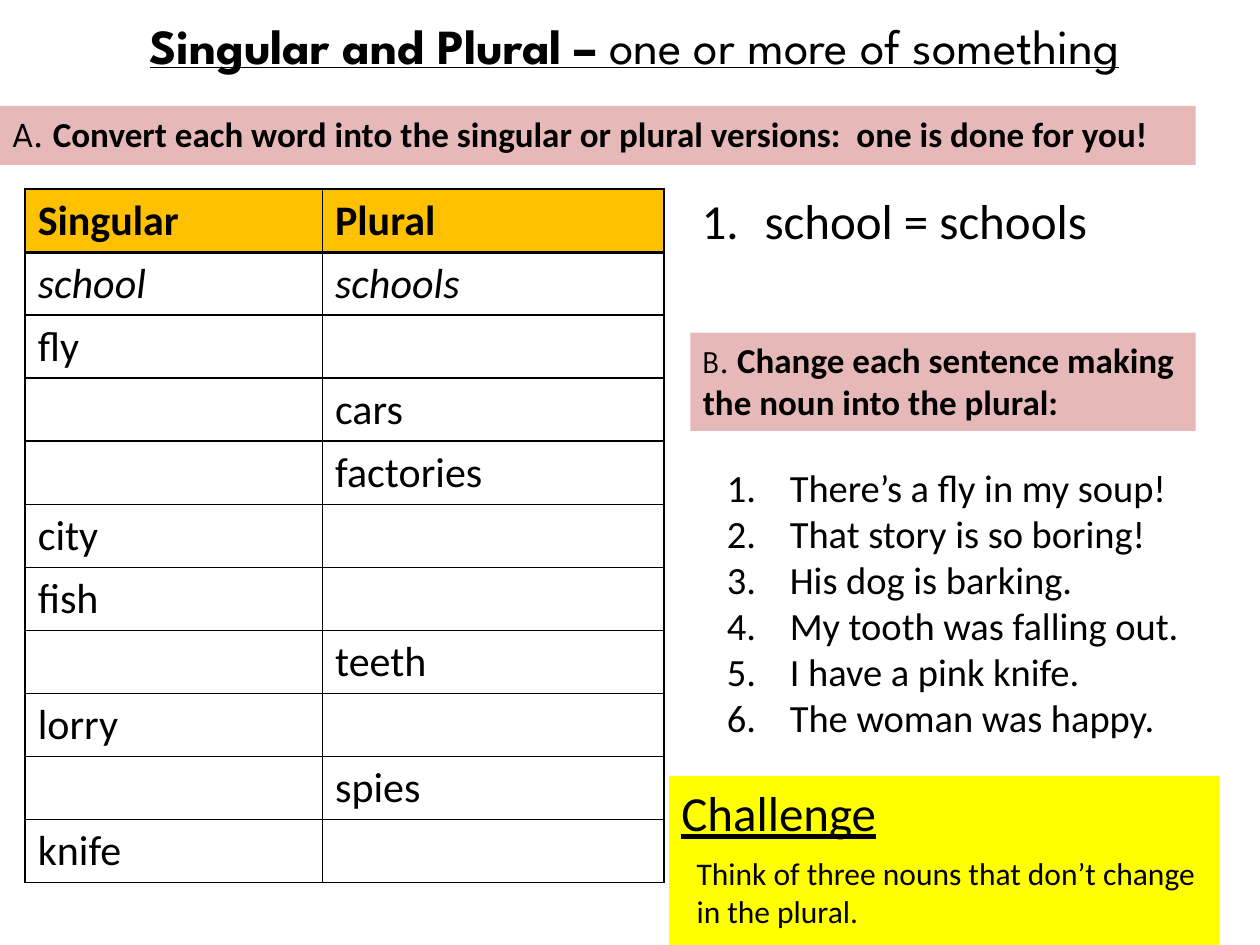
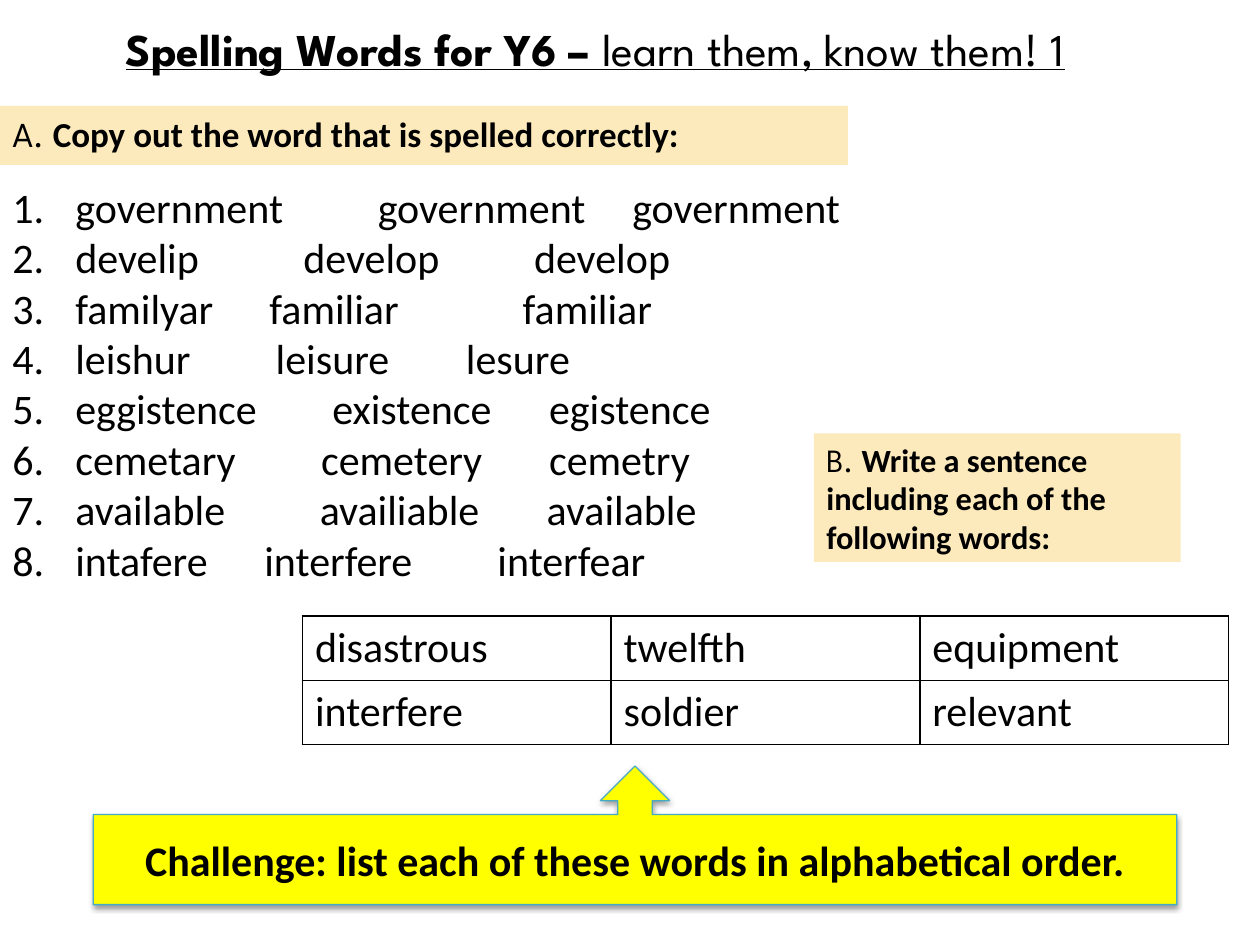
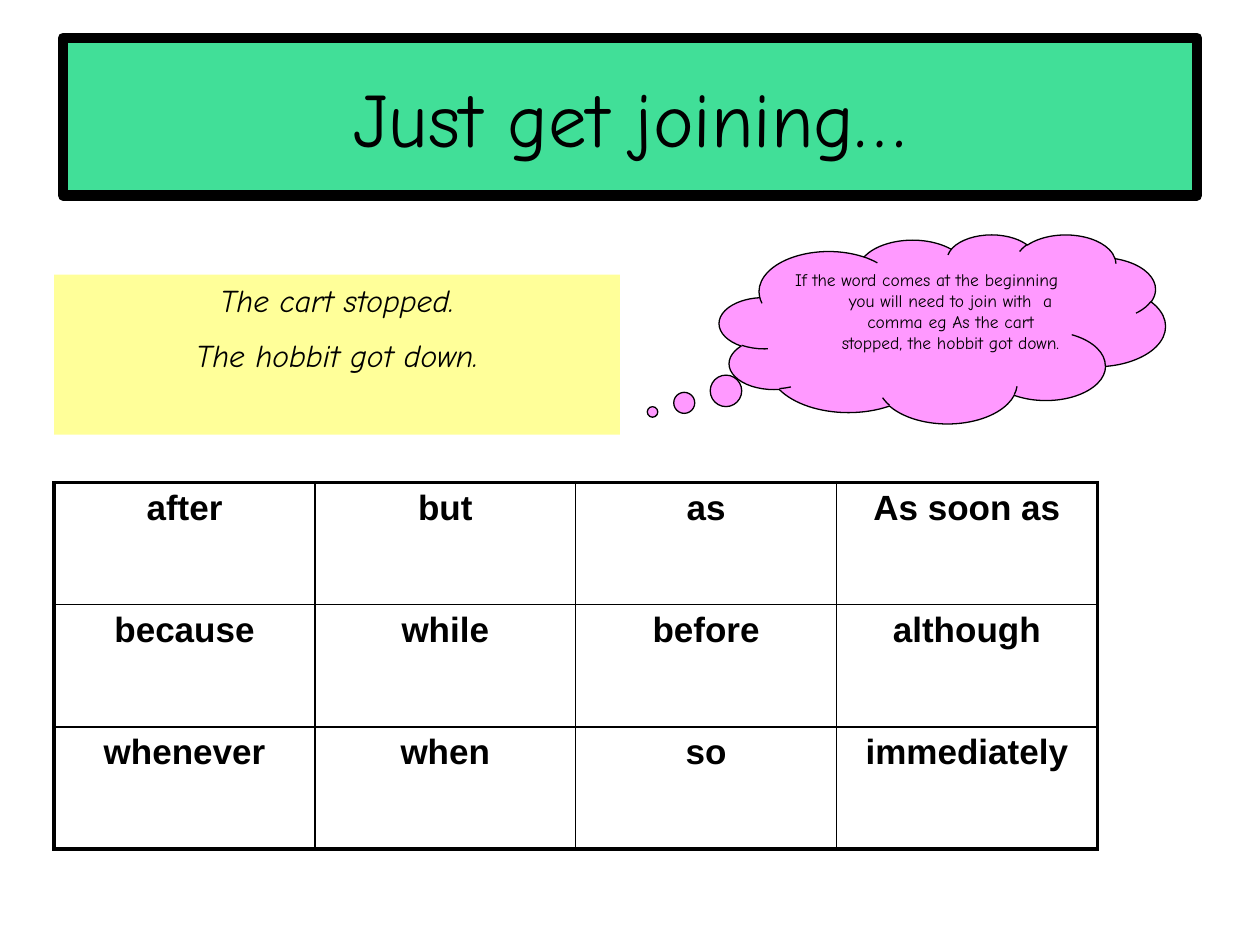
"""Build three literacy worksheets: plurals, spellings and conjunctions."""
from dataclasses import dataclass, replace

from lxml import etree
from pptx import Presentation
from pptx import util as u
from pptx.dml.color import RGBColor
from pptx.enum import shapes, text
from pptx.oxml import ns


@dataclass(frozen=True)
class Style:
    """Describe the look of a piece of text."""
    size: float
    font: str = "Calibri"
    bold: bool = False
    italic: bool = False
    underline: bool = False


@dataclass(frozen=True)
class Box:
    """Hold a region in inches."""
    left: float
    top: float
    width: float
    height: float

    def lengths(self):
        """Return the region as lengths."""
        return [u.Inches(v) for v in (self.left, self.top, self.width, self.height)]

    def inner(self, dx, dy, width, height):
        """Return a region offset from this one's corner."""
        return Box(self.left + dx, self.top + dy, width, height)


@dataclass(frozen=True)
class Theme:
    """Keep the colours and type styles of the worksheets."""
    ink: str = "000000"
    paper: str = "FFFFFF"
    pink: str = "E6B9B8"
    cream: str = "FCEABC"
    amber: str = "FFC000"
    yellow: str = "FFFF00"
    pale_yellow: str = "FFFF99"
    green: str = "41DF98"
    cloud: str = "FF99FF"
    callout_edge: str = "46AAC5"
    heading: Style = Style(28, "League Spartan", underline=True)
    letter: Style = Style(20, "League Spartan")
    task: Style = Style(20, bold=True)
    body: Style = Style(24)
    sentence: Style = Style(22)
    large: Style = Style(28)
    hint: Style = Style(18)
    joining: Style = Style(44, "Comic Neue")
    example: Style = Style(18, "Comic Neue", italic=True)
    thought: Style = Style(10, "Comic Neue")
    conjunction: Style = Style(20, "Arial", bold=True)


THEME = Theme()
CENTER = text.PP_ALIGN.CENTER
LEFT = text.PP_ALIGN.LEFT


def add_xml(parent, tag, **attributes):
    """Append a drawing element with its attributes."""
    values = {key: str(value) for key, value in attributes.items()}
    return etree.SubElement(parent, ns.qn(tag), values)


def set_font(font, style):
    """Apply a style to a font."""
    font.name, font.size = style.font, u.Pt(style.size)
    font.bold, font.italic, font.underline = style.bold, style.italic, style.underline
    font.color.rgb = RGBColor.from_string(THEME.ink)


def write(paragraph, runs, align=LEFT):
    """Write styled runs into a paragraph."""
    paragraph.alignment = align
    for words, style in runs:
        run = paragraph.add_run()
        run.text = words
        if len(runs) > 1:
            set_font(run.font, style)
    if len(runs) == 1:
        set_font(paragraph.font, runs[0][1])


def indent(paragraph, hang):
    """Give a paragraph a hanging indent and return its properties."""
    properties = paragraph._p.get_or_add_pPr()
    properties.set("marL", str(u.Inches(hang)))
    properties.set("indent", str(-u.Inches(hang)))
    return properties


def paragraphs(frame, count):
    """Return the wanted number of paragraphs of a frame."""
    return [frame.paragraphs[0]] + [frame.add_paragraph() for _ in range(count - 1)]


def text_frame(shape, anchor=text.MSO_ANCHOR.TOP):
    """Return a wrapping text frame with an anchor."""
    frame = shape.text_frame
    frame.word_wrap, frame.vertical_anchor = True, anchor
    return frame


def paint(shape, fill, edge=None, edge_width=0.75):
    """Fill and outline a shape."""
    shape.fill.solid()
    shape.fill.fore_color.rgb = RGBColor.from_string(fill)
    if edge:
        shape.line.color.rgb = RGBColor.from_string(edge)
        shape.line.width = u.Pt(edge_width)
    else:
        shape.line.fill.background()


def panel(slide, box, fill, kind=shapes.MSO_SHAPE.RECTANGLE, edge=None):
    """Add a flat filled shape."""
    shape = slide.shapes.add_shape(kind, *box.lengths())
    shape.shadow.inherit = False
    paint(shape, fill, edge)
    return shape


def title(slide, box, runs):
    """Place and write the title placeholder."""
    heading = slide.shapes.title
    heading.left, heading.top, heading.width, heading.height = box.lengths()
    frame = text_frame(heading, text.MSO_ANCHOR.MIDDLE)
    frame.auto_size = text.MSO_AUTO_SIZE.NONE
    write(frame.paragraphs[0], runs, CENTER)
    return heading


def worksheet_title(slide, box, topic, remark, size):
    """Write an underlined title with a bold topic and a plain remark."""
    style = replace(THEME.heading, size=size)
    title(slide, box, [(topic, replace(style, bold=True)), (remark, style)])


def task_banner(slide, box, fill, letter, task, letter_size=20, task_size=20):
    """Add a coloured band with a task letter and its instruction."""
    frame = text_frame(panel(slide, box, fill))
    write(frame.paragraphs[0], [(letter, replace(THEME.letter, size=letter_size)),
                                (task, replace(THEME.task, size=task_size))])


def note(slide, box, words, style):
    """Add a plain text box."""
    frame = text_frame(slide.shapes.add_textbox(*box.lengths()))
    write(frame.paragraphs[0], [(words, style)])


def numbered_list(slide, box, items, style):
    """Add a numbered list of (words, tab stops) items."""
    frame = text_frame(slide.shapes.add_textbox(*box.lengths()))
    for paragraph, (words, stops) in zip(paragraphs(frame, len(items)), items):
        properties = indent(paragraph, 0.5)
        add_xml(properties, "a:buFont", typeface="+mj-lt")
        add_xml(properties, "a:buAutoNum", type="arabicPeriod")
        if stops:
            tabs = add_xml(properties, "a:tabLst")
            for stop in stops:
                add_xml(tabs, "a:tab", pos=u.Inches(stop), algn="l")
        write(paragraph, [(words, style)])


def border(cell, widths):
    """Draw a cell's left, right, top and bottom borders."""
    properties = cell._tc.get_or_add_tcPr()
    for side, width in zip("LRTB", widths):
        line = add_xml(properties, f"a:ln{side}", w=u.Pt(width))
        add_xml(add_xml(line, "a:solidFill"), "a:srgbClr", val=THEME.ink)


def word_table(slide, box, columns, rows, row_styles, align=LEFT, outer=1, header=None):
    """Add a ruled table of words, with an optional header fill."""
    table = slide.shapes.add_table(len(rows), len(columns), *box.lengths()).table
    table.first_row = table.horz_banding = False
    for column, width in zip(table.columns, columns):
        column.width = u.Inches(width)
    last_row, last_column = len(rows) - 1, len(columns) - 1
    rule_below_header = 2 if header else 1
    for r, (words, style) in enumerate(zip(rows, row_styles)):
        table.rows[r].height = u.Inches(box.height / len(rows))
        for c, word in enumerate(words):
            cell = table.cell(r, c)
            top = outer if r == 0 else rule_below_header if r == 1 else 1
            bottom = outer if r == last_row else rule_below_header if r == 0 else 1
            border(cell, (outer if c == 0 else 1, outer if c == last_column else 1, top, bottom))
            cell.fill.solid()
            fill = header if header and r == 0 else THEME.paper
            cell.fill.fore_color.rgb = RGBColor.from_string(fill)
            paragraph = cell.text_frame.paragraphs[0]
            if word:
                write(paragraph, [(word, style)], align)
            else:
                set_font(paragraph.font, style)


def challenge_panel(slide, box, heading, hint):
    """Add a yellow panel with an underlined heading and a hint below."""
    frame = text_frame(panel(slide, box, THEME.yellow))
    write(frame.paragraphs[0], [(heading, replace(THEME.large, underline=True))])
    note(slide, box.inner(0.12, 0.57, box.width - 0.12, 0.71), hint, THEME.hint)


def challenge_callout(slide, box, words):
    """Add a shadowed callout that points up at the words above."""
    callout = panel(slide, box, THEME.yellow, shapes.MSO_SHAPE.UP_ARROW_CALLOUT,
                    THEME.callout_edge)
    effects = callout.element.spPr.find(ns.qn("a:effectLst"))
    shadow = add_xml(effects, "a:outerShdw", blurRad=u.Pt(3.1), dist=u.Pt(1.6),
                     dir=5400000, rotWithShape=0)
    add_xml(add_xml(shadow, "a:srgbClr", val=THEME.ink), "a:alpha", val=38000)
    frame = text_frame(callout, text.MSO_ANCHOR.MIDDLE)
    write(frame.paragraphs[0], [(words, replace(THEME.body, bold=True))], CENTER)


def example_panel(slide, box, sentences):
    """Add a pale panel of centred example sentences."""
    frame = text_frame(panel(slide, box, THEME.pale_yellow))
    for paragraph, sentence in zip(paragraphs(frame, len(sentences)), sentences):
        indent(paragraph, 0.38)
        paragraph.space_before = u.Pt(10)
        write(paragraph, [(sentence, THEME.example)], CENTER)


def thought_cloud(slide, box, words):
    """Add a thought cloud with a tip."""
    cloud = panel(slide, box, THEME.cloud, shapes.MSO_SHAPE.CLOUD_CALLOUT, THEME.ink)
    cloud.adjustments[0], cloud.adjustments[1] = -0.65, 0.44
    paragraph = text_frame(cloud).paragraphs[0]
    indent(paragraph, 0.38)
    write(paragraph, [(words, THEME.thought)], CENTER)


def plural_slide(slide):
    """Build the singular and plural worksheet."""
    worksheet_title(slide, Box(0.39, 0, 9.29, 0.71), "Singular and Plural – ",
                    "one or more of something", 28)
    task_banner(slide, Box(0, 0.84, 9.49, 0.47), THEME.pink, "A. ",
                "Convert each word into the singular or plural versions:  one is done for you!")
    challenge_panel(slide, Box(5.31, 6.16, 4.37, 1.34), "Challenge",
                    "Think of three nouns that don’t change in the plural.")
    task_banner(slide, Box(5.48, 2.64, 4.01, 0.78), THEME.pink, "B. ",
                "Change each sentence making the noun into the plural:", 18)
    nouns = [("Singular", "Plural"), ("school", "schools"), ("fly", ""), ("", "cars"),
             ("", "factories"), ("city", ""), ("fish", ""), ("", "teeth"),
             ("lorry", ""), ("", "spies"), ("knife", "")]
    styles = [replace(THEME.body, bold=True), replace(THEME.body, italic=True)]
    styles += [THEME.body] * (len(nouns) - len(styles))
    word_table(slide, Box(0.2, 1.5, 5.07, 5.5), (2.36, 2.71), nouns, styles,
               header=THEME.amber)
    sentences = ("There’s a fly in my soup!", "That story is so boring!",
                 "His dog is barking.", "My tooth was falling out.",
                 "I have a pink knife.", "The woman was happy.")
    numbered_list(slide, Box(5.67, 3.63, 4.65, 2.32),
                  [(sentence, ()) for sentence in sentences], THEME.sentence)
    numbered_list(slide, Box(5.47, 1.46, 3.3, 0.57), [("school = schools", ())], THEME.large)


def spelling_slide(slide):
    """Build the spelling worksheet."""
    spellings = [("government\tgovernment\tgovernment", (2.9, 4.92)),
                 ("develip\tdevelop\tdevelop", (2.31, 4.14)),
                 ("familyar\tfamiliar\tfamiliar", (2.04, 4.05)),
                 ("leishur\tleisure\tlesure", (2.09, 3.6)),
                 ("eggistence\texistence\tegistence", (2.54, 4.26)),
                 ("cemetary\tcemetery\tcemetry", (2.45, 4.26)),
                 ("available\tavailiable\tavailable", (2.44, 4.24)),
                 ("intafere\tinterfere\tinterfear", (2, 3.85))]
    numbered_list(slide, Box(0, 1.39, 8.74, 3.33), spellings, THEME.body)
    task_banner(slide, Box(0, 0.84, 6.73, 0.47), THEME.cream, "A. ",
                "Copy out the word that is spelled correctly:")
    challenge_callout(slide, Box(0.74, 6.08, 8.6, 1.1),
                      "Challenge: list each of these words in alphabetical order.")
    worksheet_title(slide, Box(0.08, 0.03, 9.29, 0.71), "Spelling Words for Y6 – ",
                    "learn them, know them! 1", 26)
    task_banner(slide, Box(6.46, 3.44, 2.91, 1.02), THEME.cream, "B. ",
                "Write a sentence including each of the following words:", 18.5, 18.5)
    words = [("disastrous", "twelfth", "equipment"), ("interfere", "soldier", "relevant")]
    word_table(slide, Box(2.4, 4.89, 7.35, 1.02), [2.45] * 3, words, [THEME.body] * 2)


def joining_slide(slide):
    """Build the joining sentences worksheet."""
    heading = title(slide, Box(0.5, 0.3, 9, 1.25), [("Just get joining…", THEME.joining)])
    paint(heading, THEME.green, THEME.ink, 6)
    example_panel(slide, Box(0.43, 2.18, 4.49, 1.27),
                  ("The cart stopped.", "The hobbit got down."))
    conjunctions = [("after", "but", "as", "As soon as"),
                    ("because", "while", "before", "although"),
                    ("whenever", "when", "so", "immediately")]
    word_table(slide, Box(0.43, 3.83, 8.27, 2.91), [2.07] * 4, conjunctions,
               [THEME.conjunction] * 3, CENTER, outer=2.25)
    thought_cloud(slide, Box(5.71, 1.86, 3.54, 1.5),
                  "If the word comes at the beginning you will need to join with  a comma "
                  "eg As the cart stopped, the hobbit got down.")


def main():
    """Build and save the worksheets."""
    deck = Presentation()
    deck.slide_width, deck.slide_height = u.Inches(10), u.Inches(7.5)
    title_only = deck.slide_layouts[5]
    for build in (plural_slide, spelling_slide, joining_slide):
        build(deck.slides.add_slide(title_only))
    deck.save("out.pptx")


if __name__ == "__main__":
    main()
